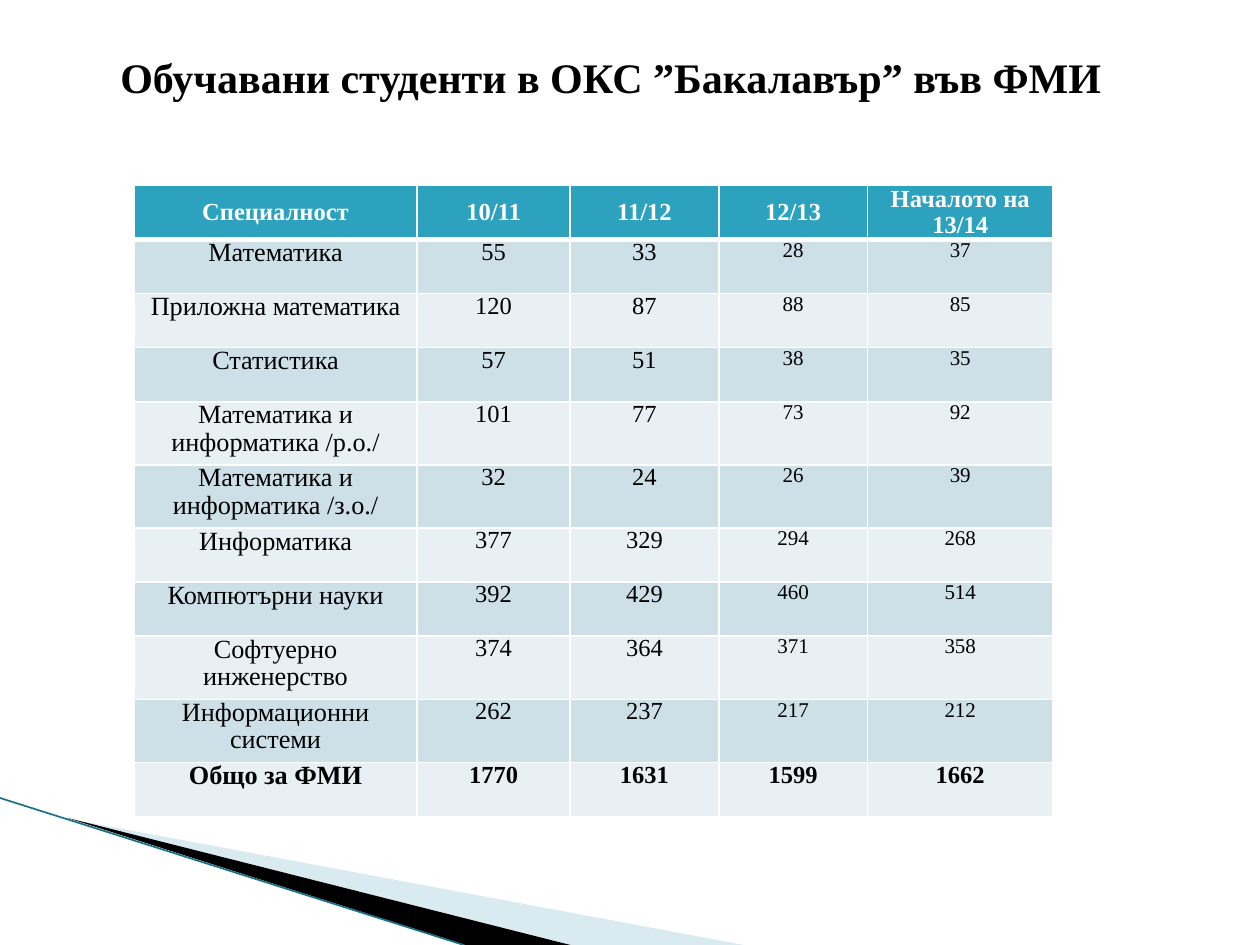
import pptx
import pptx.dml.color
import pptx.enum.text
import pptx.enum.shapes
import pptx.oxml.ns
import pptx.util
from lxml import etree

Pt = pptx.util.Pt
RGBColor = pptx.dml.color.RGBColor
MSO_ANCHOR = pptx.enum.text.MSO_ANCHOR
PP_ALIGN = pptx.enum.text.PP_ALIGN
qn = pptx.oxml.ns.qn

FONT = "Times New Roman"
WHITE = RGBColor(0xFF, 0xFF, 0xFF)
BLACK = RGBColor(0, 0, 0)
HEADER_TEAL = RGBColor(0x2D, 0xA2, 0xBF)
BAND_DARK = RGBColor(0xCD, 0xE0, 0xE8)
BAND_LIGHT = RGBColor(0xE8, 0xF0, 0xF4)
WEDGE_BLUE = RGBColor(0xA0, 0xCB, 0xDC)
EDGE_TEAL = RGBColor(0x1A, 0x71, 0x87)

TITLE = "Обучавани студенти в ОКС ”Бакалавър” във ФМИ"
ENROLMENT = [
    ("Специалност", "10/11", "11/12", "12/13", "Началото на 13/14"),
    ("Математика", 55, 33, 28, 37),
    ("Приложна математика", 120, 87, 88, 85),
    ("Статистика", 57, 51, 38, 35),
    ("Математика и информатика /р.о./", 101, 77, 73, 92),
    ("Математика и информатика /з.о./", 32, 24, 26, 39),
    ("Информатика", 377, 329, 294, 268),
    ("Компютърни науки", 392, 429, 460, 514),
    ("Софтуерно инженерство", 374, 364, 371, 358),
    ("Информационни системи", 262, 237, 217, 212),
    ("Общо за ФМИ", 1770, 1631, 1599, 1662),
]
COLUMN_WIDTHS = (161.8, 87.4, 85, 85, 106)
ROW_HEIGHT, TALL_ROW_HEIGHT = 30.9, 36.1
TALL_ROWS = (4, 5, 8, 9)
LAST_ROW = len(ENROLMENT) - 1
HEADER_SIZES = (14,) * 5
BODY_SIZES = (15, 14, 14, 12, 12)
TOTAL_SIZES = (15, 14, 14, 14, 14)


def style_paragraph(paragraph, size, color, bold):
    paragraph.alignment = PP_ALIGN.CENTER
    font = paragraph.font
    font.name, font.size, font.bold = FONT, Pt(size), bold
    font.color.rgb = color


def add_title(slide):
    title = slide.shapes.title
    title.left, title.top, title.width, title.height = Pt(48), Pt(26), Pt(602), Pt(65)
    frame = title.text_frame
    frame.text = TITLE
    frame.word_wrap = True
    frame.auto_size = pptx.enum.text.MSO_AUTO_SIZE.NONE
    frame.vertical_anchor = MSO_ANCHOR.TOP
    style_paragraph(frame.paragraphs[0], 24, BLACK, True)


def add_wedge(slide, corners, color, opacity=100):
    points = [(Pt(x), Pt(y)) for x, y in corners]
    builder = slide.shapes.build_freeform(*points[0])
    builder.add_line_segments(points[1:], close=True)
    wedge = builder.convert_to_shape()
    wedge.shadow.inherit = False
    wedge.fill.solid()
    wedge.fill.fore_color.rgb = color
    wedge.line.fill.background()
    if opacity < 100:
        srgb = wedge.fill._xPr.find(".//" + qn("a:srgbClr"))
        etree.SubElement(srgb, qn("a:alpha"), val=str(opacity * 1000))


def add_edge(slide, start, end):
    edge = slide.shapes.add_connector(
        pptx.enum.shapes.MSO_CONNECTOR.STRAIGHT, *map(Pt, start + end))
    edge.line.color.rgb = EDGE_TEAL
    edge.line.width = Pt(0.95)
    etree.SubElement(edge._element.spPr, qn("a:effectLst"))


def set_borders(cell, top, bottom):
    properties = cell._tc.get_or_add_tcPr()
    widths = {"a:lnL": 1, "a:lnR": 1, "a:lnT": top, "a:lnB": bottom}
    for position, (tag, width) in enumerate(widths.items()):
        border = etree.Element(qn(tag), w=str(Pt(width)))
        fill = etree.SubElement(border, qn("a:solidFill"))
        etree.SubElement(fill, qn("a:srgbClr"), val=str(WHITE))
        properties.insert(position, border)


def fill_cell(cell, value, row, size):
    is_header = row == 0
    cell.text = str(value)
    cell.margin_left = cell.margin_right = Pt(3.6)
    cell.margin_top = cell.margin_bottom = Pt(0)
    cell.vertical_anchor = MSO_ANCHOR.MIDDLE if is_header else MSO_ANCHOR.TOP
    cell.fill.solid()
    band = BAND_DARK if row % 2 else BAND_LIGHT
    cell.fill.fore_color.rgb = HEADER_TEAL if is_header else band
    set_borders(cell, 3 if row == 1 else 1, 3 if is_header else 1)
    paragraph = cell.text_frame.paragraphs[0]
    paragraph.line_spacing = 0.95
    style_paragraph(paragraph, size, WHITE if is_header else BLACK,
                    row in (0, LAST_ROW))


def add_enrolment_table(slide):
    heights = [TALL_ROW_HEIGHT if row in TALL_ROWS else ROW_HEIGHT
               for row in range(len(ENROLMENT))]
    table = slide.shapes.add_table(
        len(ENROLMENT), len(COLUMN_WIDTHS), Pt(76.6), Pt(106),
        Pt(sum(COLUMN_WIDTHS)), Pt(sum(heights))).table
    for column, width in zip(table.columns, COLUMN_WIDTHS):
        column.width = Pt(width)
    row_sizes = {0: HEADER_SIZES, LAST_ROW: TOTAL_SIZES}
    for row, values in enumerate(ENROLMENT):
        table.rows[row].height = Pt(heights[row])
        sizes = row_sizes.get(row, BODY_SIZES)
        for column, (value, size) in enumerate(zip(values, sizes)):
            fill_cell(table.cell(row, column), value, row, size)


def main():
    presentation = pptx.Presentation()
    presentation.slide_width, presentation.slide_height = Pt(720), Pt(540)
    slide = presentation.slides.add_slide(presentation.slide_layouts[5])
    add_wedge(slide, [(39.6, 468), (425, 540), (326, 540)], WEDGE_BLUE, 40)
    add_wedge(slide, [(38.2, 467.3), (326, 540), (266, 540)], BLACK)
    add_edge(slide, (0, 456), (265, 540))
    add_enrolment_table(slide)
    add_title(slide)
    presentation.save("out.pptx")


if __name__ == "__main__":
    main()
